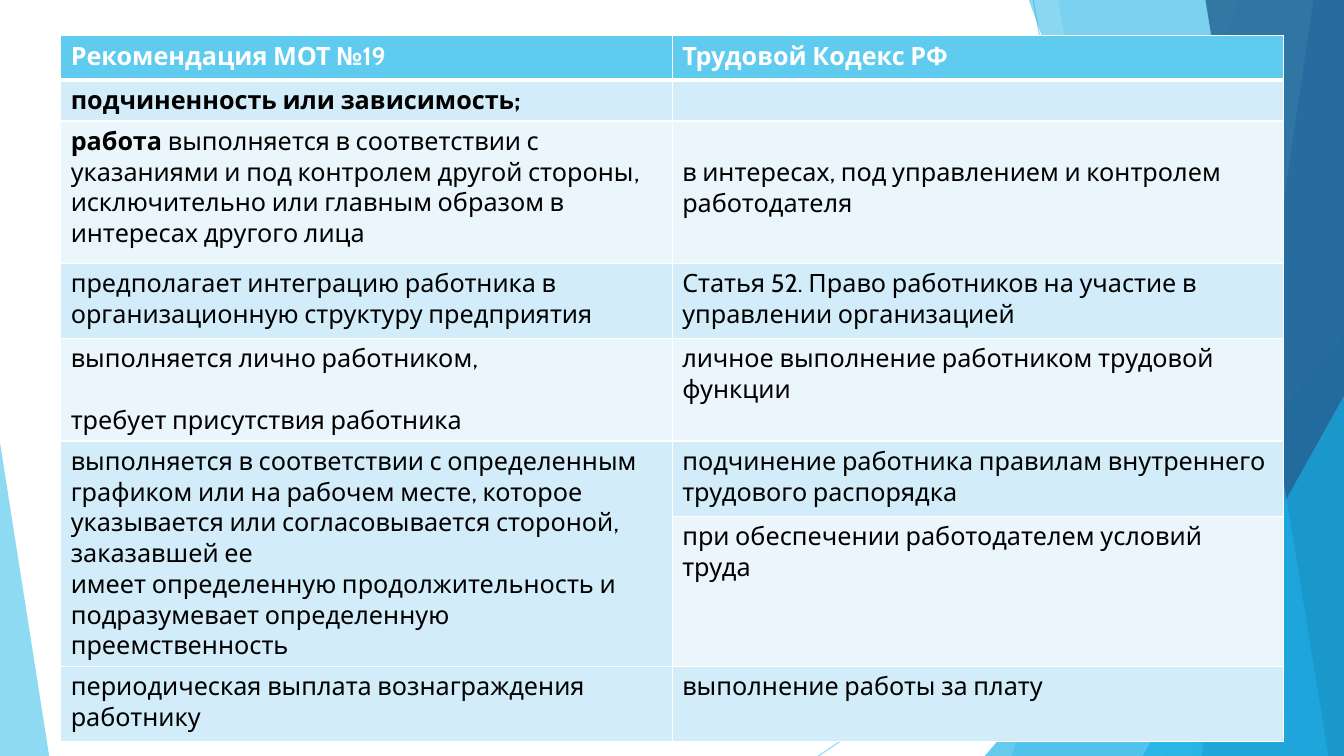
from lxml.etree import SubElement
from pptx import Presentation
from pptx.dml.color import RGBColor
from pptx.enum.shapes import MSO_CONNECTOR, MSO_SHAPE
from pptx.oxml import parse_xml
from pptx.oxml.ns import nsdecls, qn
from pptx.util import Cm, Pt

WIDTH, HEIGHT = 33.87, 19.05
WHITE = RGBColor(0xFF, 0xFF, 0xFF)
BLACK = RGBColor(0x00, 0x00, 0x00)
SKY = RGBColor(0x5F, 0xCB, 0xEF)
AZURE = RGBColor(0x17, 0xB0, 0xE4)
BLUE = RGBColor(0x2E, 0x83, 0xC3)
NAVY = RGBColor(0x22, 0x62, 0x92)
BAND_DARK = RGBColor(0xD2, 0xEC, 0xF9)
BAND_LIGHT = RGBColor(0xEA, 0xF6, 0xFC)
LINE_GAP = 22

ROW_HEIGHTS = [1.12, 0.81, 3.58, 1.9, 1.9, 1.9, 3.28, 1.9]
# Each cell is a list of paragraphs
ROWS = [
    (["Рекомендация МОТ №19"], ["Трудовой Кодекс РФ"]),
    (["подчиненность или зависимость;"], []),
    (["работа выполняется в соответствии с указаниями и под контролем другой стороны,",
      "исключительно или главным образом в интересах другого лица"],
     ["в интересах, под управлением и контролем работодателя"]),
    (["предполагает интеграцию работника в организационную структуру предприятия"],
     ["Статья 52. Право работников на участие в управлении организацией"]),
    (["выполняется лично работником,", "требует присутствия работника"],
     ["личное выполнение работником трудовой функции"]),
    (["выполняется в соответствии с определенным графиком или на рабочем месте, "
      "которое указывается или согласовывается стороной, заказавшей ее",
      "имеет определенную продолжительность и подразумевает определенную преемственность"],
     ["подчинение работника правилам внутреннего трудового распорядка"]),
    ([], ["при обеспечении работодателем условий труда"]),
    (["периодическая выплата вознаграждения работнику"], ["выполнение работы за плату"]),
]
BOLD_STARTS = ("подчиненность или зависимость;", "работа ")


def write(para, text, size=18, font="Cabin", color=BLACK, bold=False):
    span = para.add_run()
    span.text = text
    span.font.size = Pt(size)
    span.font.name = font
    span.font.color.rgb = color
    span.font.bold = bold


def set_opacity(element, percent):
    for color in element.iter(qn("a:srgbClr")):
        SubElement(color, qn("a:alpha"), val=str(percent * 1000))


def set_borders(cell, top=1, bottom=1):
    widths = {"lnL": 1, "lnR": 1, "lnT": top, "lnB": bottom}
    properties = cell._tc.get_or_add_tcPr()
    for position, (side, width) in enumerate(widths.items()):
        properties.insert(position, parse_xml(
            f'<a:{side} {nsdecls("a")} w="{Pt(width)}"><a:solidFill>'
            f'<a:srgbClr val="{WHITE}"/></a:solidFill></a:{side}>'))


class SlideBuilder:
    def __init__(self, slide):
        self.shapes = slide.shapes

    def paint(self, shape, color, opacity):
        shape.shadow.inherit = False
        shape.fill.solid()
        shape.fill.fore_color.rgb = color
        shape.line.fill.background()
        set_opacity(shape._element.spPr, opacity)

    def line(self, x1, y1, x2, y2):
        line = self.shapes.add_connector(
            MSO_CONNECTOR.STRAIGHT, Cm(x1), Cm(y1), Cm(x2), Cm(y2))
        line.line.color.rgb = SKY
        line.line.width = Pt(0.75)
        set_opacity(line._element.spPr, 70)
        SubElement(line._element.spPr, qn("a:effectLst"))

    def facet(self, top_x, bottom_x, color, opacity):
        """Fill the area between a slanted edge and the right side of the slide."""
        outline = self.shapes.build_freeform(Cm(top_x), 0)
        corners = [(WIDTH, 0), (WIDTH, HEIGHT), (bottom_x, HEIGHT)]
        outline.add_line_segments([(Cm(x), Cm(y)) for x, y in corners], close=True)
        self.paint(outline.convert_to_shape(), color, opacity)

    def triangle(self, left, top, right, apex, color, opacity):
        """Stand a triangle on the bottom of the slide."""
        shape = self.shapes.add_shape(
            MSO_SHAPE.ISOSCELES_TRIANGLE,
            Cm(left), Cm(top), Cm(right - left), Cm(HEIGHT - top))
        shape.adjustments[0] = apex
        self.paint(shape, color, opacity)

    def fill_cell(self, cell, paragraphs, header):
        for index, text in enumerate(paragraphs):
            frame = cell.text_frame
            para = frame.add_paragraph() if index else frame.paragraphs[0]
            start = next((s for s in BOLD_STARTS if text.startswith(s)), "")
            if start:
                write(para, start, bold=True)
            if text != start:
                write(para, text[len(start):], color=WHITE if header else BLACK, bold=header)

    def table(self, left, top, width, rows, heights):
        frame = self.shapes.add_table(
            len(rows), 2, Cm(left), Cm(top), Cm(width), Cm(sum(heights)))
        table = frame.table
        for row_index, row in enumerate(rows):
            table.rows[row_index].height = Cm(heights[row_index])
            header = row_index == 0
            band = SKY if header else BAND_DARK if row_index % 2 else BAND_LIGHT
            for column, paragraphs in enumerate(row):
                cell = table.cell(row_index, column)
                cell.fill.solid()
                cell.fill.fore_color.rgb = band
                set_borders(cell, top=3 if row_index == 1 else 1, bottom=3 if header else 1)
                self.fill_cell(cell, paragraphs, header)
        return table


def main():
    deck = Presentation()
    deck.slide_width, deck.slide_height = Cm(WIDTH), Cm(HEIGHT)
    page = SlideBuilder(deck.slides.add_slide(deck.slide_layouts[6]))

    page.line(26.04, 0, 29.41, HEIGHT)
    page.line(WIDTH, 10.24, 20.62, HEIGHT)
    page.facet(31.19, 25.5, SKY, 36)
    page.facet(26.67, 30.05, SKY, 20)
    page.triangle(24.82, 8.46, WIDTH, 1, AZURE, 66)
    page.facet(25.93, 32.79, AZURE, 50)
    page.facet(33.1, 30.28, BLUE, 70)
    page.facet(30.38, 33.48, NAVY, 80)
    page.triangle(28.8, 9.98, WIDTH, 1, AZURE, 66)
    page.triangle(0, 11.15, 1.24, 0, SKY, 70)

    table = page.table(1.53, 0.9, 30.82, ROWS, ROW_HEIGHTS)
    table.cell(5, 0).merge(table.cell(6, 0))
    table.cell(2, 1).margin_top = Cm(0.13) + Pt(LINE_GAP)
    table.cell(4, 0).text_frame.paragraphs[1].space_before = Pt(LINE_GAP)
    deck.save("out.pptx")


if __name__ == "__main__":
    main()
